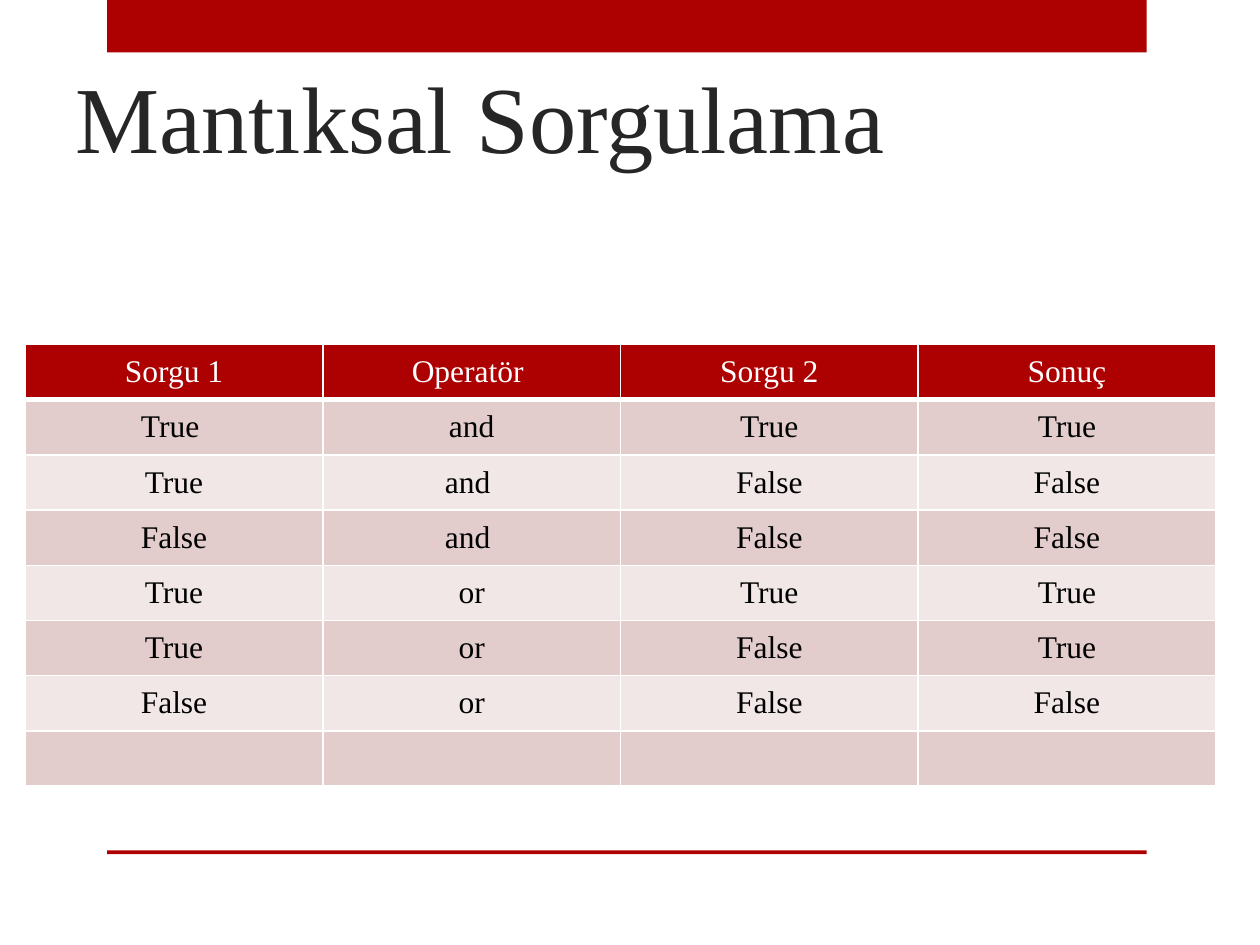
import pptx
import pptx.dml.color
import pptx.enum.shapes
import pptx.enum.text
import pptx.oxml
import pptx.oxml.ns
import pptx.util

Pt = pptx.util.Pt
ALIGN = pptx.enum.text.PP_ALIGN
ANCHOR = pptx.enum.text.MSO_ANCHOR

# Content
TITLE = "Mantıksal Sorgulama"
ROWS = [
    ("Sorgu 1", "Operatör ", "Sorgu 2", "Sonuç"),
    ("True ", "and", "True", "True"),
    ("True", "and ", "False", "False"),
    ("False", "and ", "False", "False"),
    ("True", "or", "True", "True"),
    ("True", "or", "False", "True"),
    ("False", "or", "False", "False"),
    ("", "", "", ""),
]

# Style and layout, in points
FONT = "Times New Roman"
COLORS = {
    "accent": "AD0101",
    "title": "262626",
    "header_text": "FFFFFF",
    "body_text": "000000",
    "band_dark": "E3CCCC",
    "band_light": "F1E7E7",
    "border": "FFFFFF",
}
BARS = [(61.2, 0, 594, 30), (61.2, 486, 594, 2.16)]
TITLE_BOX = (36, 14.4, 648, 87.84)
TABLE_LEFT, TABLE_TOP = 14.4, 196.8
COLUMN_WIDTH, ROW_HEIGHT = 170.1, 31.55


def color(name):
    return pptx.dml.color.RGBColor.from_string(COLORS[name])


def points(box):
    return [Pt(value) for value in box]


def add_run(paragraph, text, size, color_name):
    run = paragraph.add_run()
    run.text = text
    run.font.name = FONT
    run.font.size = Pt(size)
    run.font.color.rgb = color(color_name)


def set_borders(cell, bottom_width):
    properties = cell._tc.get_or_add_tcPr()
    for side, width in (("L", 1), ("R", 1), ("T", 1), ("B", bottom_width)):
        properties.append(pptx.oxml.parse_xml(
            f'<a:ln{side} {pptx.oxml.ns.nsdecls("a")} w="{Pt(width)}">'
            f'<a:solidFill><a:srgbClr val="{COLORS["border"]}"/></a:solidFill>'
            f'</a:ln{side}>'))


def row_style(row_index):
    if row_index == 0:
        return "accent", "header_text", 3
    band = "band_dark" if row_index % 2 else "band_light"
    return band, "body_text", 1


presentation = pptx.Presentation()
presentation.slide_width, presentation.slide_height = Pt(720), Pt(540)
slide = presentation.slides.add_slide(presentation.slide_layouts[5])

# Top and bottom bars
for box in BARS:
    bar = slide.shapes.add_shape(
        pptx.enum.shapes.MSO_SHAPE.RECTANGLE, *points(box))
    bar.shadow.inherit = False
    bar.fill.solid()
    bar.fill.fore_color.rgb = color("accent")
    bar.line.fill.background()

# Title
title = slide.shapes.title
title.left, title.top, title.width, title.height = points(TITLE_BOX)
title.text_frame.vertical_anchor = ANCHOR.BOTTOM
title_paragraph = title.text_frame.paragraphs[0]
title_paragraph.alignment = ALIGN.LEFT
add_run(title_paragraph, TITLE, 54, "title")

# Truth table
column_count = len(ROWS[0])
table = slide.shapes.add_table(
    len(ROWS), column_count, Pt(TABLE_LEFT), Pt(TABLE_TOP),
    Pt(COLUMN_WIDTH * column_count), Pt(ROW_HEIGHT * len(ROWS))).table
for column in table.columns:
    column.width = Pt(COLUMN_WIDTH)
for row_index, texts in enumerate(ROWS):
    table.rows[row_index].height = Pt(ROW_HEIGHT)
    fill_name, text_name, bottom_width = row_style(row_index)
    for column_index, text in enumerate(texts):
        cell = table.cell(row_index, column_index)
        set_borders(cell, bottom_width)
        cell.fill.solid()
        cell.fill.fore_color.rgb = color(fill_name)
        cell.vertical_anchor = ANCHOR.MIDDLE
        paragraph = cell.text_frame.paragraphs[0]
        paragraph.alignment = ALIGN.CENTER
        if text:
            add_run(paragraph, text, 18, text_name)

presentation.save("out.pptx")
